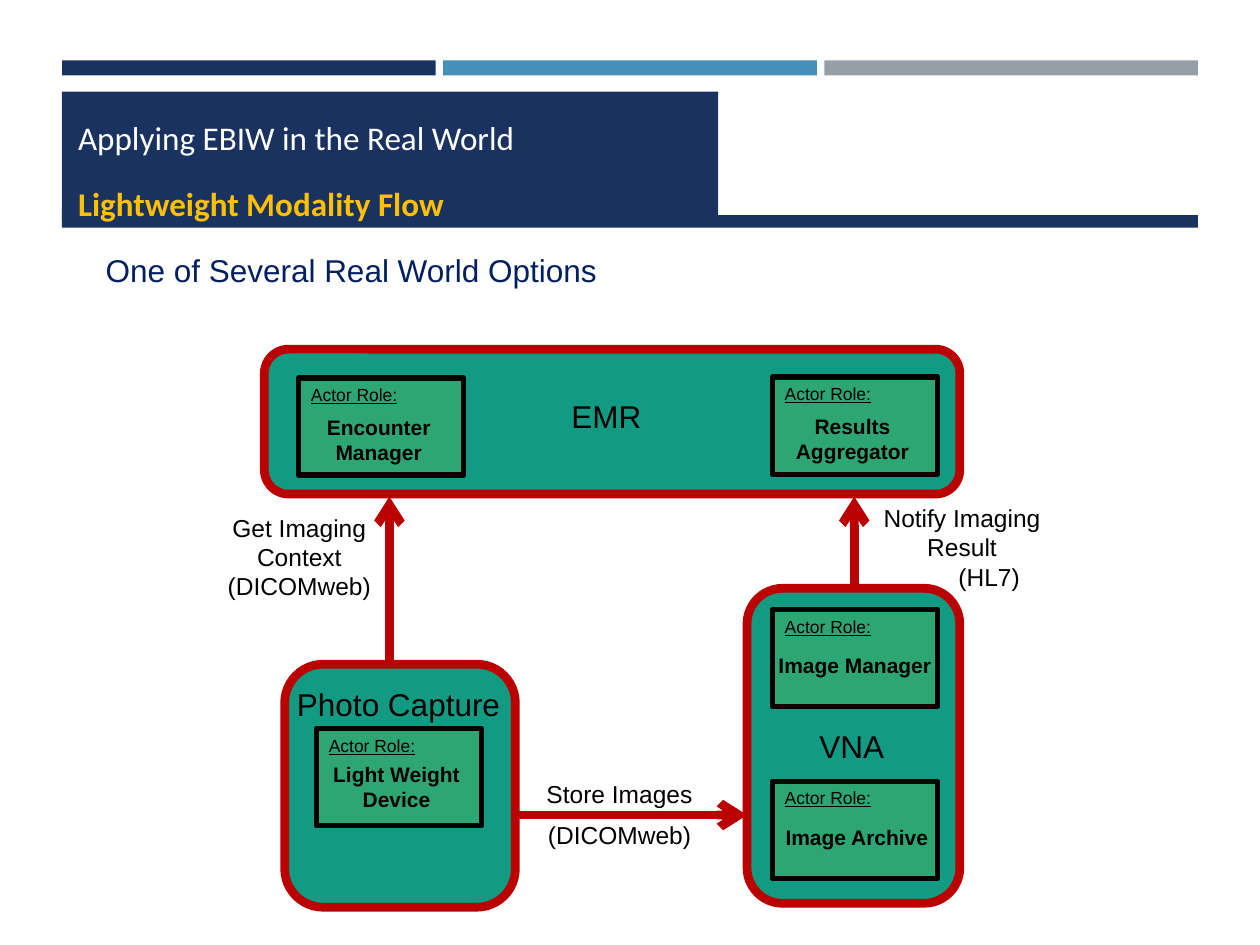
from lxml.etree import SubElement
from pptx import Presentation
from pptx.dml.color import RGBColor
from pptx.enum.shapes import MSO_CONNECTOR as CONN, MSO_SHAPE as SHAPE
from pptx.enum.text import MSO_ANCHOR as ANCHOR, MSO_AUTO_SIZE as AUTO, PP_ALIGN as AL
from pptx.oxml.ns import qn
from pptx.util import Cm, Pt

NAVY = RGBColor(0x1A, 0x32, 0x60)
BLUE = RGBColor(0x45, 0x90, 0xB8)
GREY = RGBColor(0x96, 0x9F, 0xA7)
INK = RGBColor(0x00, 0x20, 0x60)
GOLD = RGBColor(0xFF, 0xC0, 0x00)
YELLOW = RGBColor(0xFF, 0xFF, 0x00)
TEAL = RGBColor(0x12, 0x9A, 0x83)
RED = RGBColor(0xBA, 0x00, 0x00)
BLACK = RGBColor(0x00, 0x00, 0x00)
WHITE = RGBColor(0xFF, 0xFF, 0xFF)

SYSTEM_NAME = {"size": Pt(18)}
ACTOR_LABEL = {"size": Pt(10), "underline": True}
ACTOR_ROLE = {"size": Pt(12), "bold": True}
FLOW_LABEL = {"size": Pt(14)}
ACTOR_W, ACTOR_H = 3.33, 1.96


def set_font(font, fmt, color=BLACK):
    """Apply a dict of format values and a colour to a font."""
    for name, value in {"name": "Arial", **fmt}.items():
        setattr(font, name, value)
    font.color.rgb = color


def add_text(s, box, lines, fmt, color=BLACK, align=AL.CENTER):
    """Add a wrapping text box with one paragraph per line."""
    tf = s.shapes.add_textbox(*map(Cm, box)).text_frame
    tf.word_wrap = True
    tf.text = "\n".join(lines)
    for p in tf.paragraphs:
        p.alignment = align
        set_font(p.font, fmt, color)
    return tf


def add_box(s, kind, box, fill, line=None, width=0):
    """Add a flat filled shape with an optional outline."""
    sp = s.shapes.add_shape(kind, *map(Cm, box))
    sp.shadow.inherit = False
    sp.fill.solid()
    sp.fill.fore_color.rgb = fill
    if line is None:
        sp.line.fill.background()
    else:
        sp.line.color.rgb = line
        sp.line.width = Pt(width)
    return sp


def add_header(s, x, y, w):
    """Draw the colour bars, the title panel and its rule."""
    gap = 0.15
    bar_w = (w - 2 * gap) / 3
    for i, color in enumerate((NAVY, BLUE, GREY)):
        add_box(s, SHAPE.RECTANGLE, (x + i * (bar_w + gap), y, bar_w, 0.3), color)
    add_box(s, SHAPE.RECTANGLE, (x, y + 0.63, 13.23, 2.57), NAVY)
    add_box(s, SHAPE.RECTANGLE, (x, y + 3.12, w, 0.25), NAVY)

    title = s.shapes.title
    place = {"left": x + 0.07, "top": y + 1.02, "width": 17.86, "height": 2.08}
    for name, value in place.items():
        setattr(title, name, Cm(value))
    title.element.getparent().append(title.element)
    tf = title.text_frame
    for name, value in {"auto_size": AUTO.NONE, "word_wrap": True,
                        "vertical_anchor": ANCHOR.TOP}.items():
        setattr(tf, name, value)
    tf.text = "Applying EBIW in the Real World\nLightweight Modality Flow"
    for p, color, bold, gap in zip(tf.paragraphs, (WHITE, GOLD), (False, True), (0, 15)):
        p.alignment = AL.LEFT
        p.space_before = Pt(gap)
        set_font(p.font, {"name": "Calibri", "size": Pt(18.9), "bold": bold}, color)


def add_actor(s, x, y, role, dx, dy):
    """Draw an actor card with its role placed at an offset."""
    sp = add_box(s, SHAPE.RECTANGLE, (x, y, ACTOR_W, ACTOR_H), YELLOW, BLACK, 3)
    SubElement(sp.element.spPr.find(".//" + qn("a:srgbClr")), qn("a:alpha"), val="12000")
    add_text(s, (x, y, ACTOR_W, 0.69), ["Actor Role:"], ACTOR_LABEL, align=AL.LEFT)
    add_text(s, (x + dx - 0.21, y + dy, ACTOR_W + 0.42, 1.27), role, ACTOR_ROLE)


def add_system(s, box, name, name_box, actors):
    """Draw a system with its name and actors relative to its corner."""
    x, y = box[:2]
    dx, dy, w, h = name_box
    add_box(s, SHAPE.ROUNDED_RECTANGLE, box, TEAL, RED, 5)
    add_text(s, (x + dx, y + dy, w, h), [name], SYSTEM_NAME)
    for ax, ay, role, rx, ry in actors:
        add_actor(s, x + ax, y + ay, role, rx, ry)


def add_flow(s, start, end, label_box, lines):
    """Draw an arrow from start to end with its label."""
    cn = s.shapes.add_connector(CONN.STRAIGHT, *map(Cm, (*start, *end)))
    cn.line.color.rgb = RED
    cn.line.width = Pt(5)
    sp_pr = cn.element.spPr
    SubElement(sp_pr.find(qn("a:ln")), qn("a:tailEnd"), type="arrow")
    SubElement(sp_pr, qn("a:effectLst"))
    return add_text(s, label_box, lines, FLOW_LABEL)


def main():
    """Build the slide and save it."""
    prs = Presentation()
    prs.slide_width, prs.slide_height = Cm(25.4), Cm(19.05)
    s = prs.slides.add_slide(prs.slide_layouts[5])

    add_header(s, 1.25, 1.22, 22.9)
    add_text(s, (1.88, 4.93, 15, 1.02), ["One of Several Real World Options"],
             SYSTEM_NAME, INK, AL.LEFT)

    add_system(s, (5.74, 13.39, 4.65, 4.9), "Photo Capture", (-0.23, 0.3, 5.05, 1.02),
               [(0.64, 1.3, ["Light Weight", "Device"], -0.05, 0.53)])
    add_system(s, (15.06, 11.86, 4.29, 6.35), "VNA", (1.07, 2.67, 2.08, 1.02),
               [(0.51, 0.43, ["Image Manager"], 0, 0.74),
                (0.51, 3.89, ["Image Archive"], 0.04, 0.74)])
    add_system(s, (5.33, 7.04, 14.02, 2.92), "EMR", (5.64, 0.84, 2.51, 1.02),
               [(0.69, 0.58, ["Encounter", "Manager"], -0.05, 0.61),
                (10.24, 0.56, ["Results", "Aggregator"], -0.05, 0.61)])

    add_flow(s, (7.85, 13.39), (7.85, 10.01), (3.89, 10.21, 4.29, 2.06),
             ["Get Imaging", "Context", "(DICOMweb)"])
    store = add_flow(s, (10.39, 16.43), (15.06, 16.43), (10.19, 15.57, 4.6, 1.7),
                     ["Store Images", "(DICOMweb)"])
    store.paragraphs[1].space_before = Pt(7)
    notify = add_flow(s, (17.22, 11.86), (17.22, 10.01), (17.25, 10.01, 4.29, 2.06),
                      ["Notify Imaging Result", "(HL7)"])
    notify.paragraphs[1].element.get_or_add_pPr().set("marL", str(Cm(1.09))) \
        if hasattr(notify.paragraphs[1], "element") else \
        notify.paragraphs[1]._p.get_or_add_pPr().set("marL", str(Cm(1.09)))

    prs.save("out.pptx")


if __name__ == "__main__":
    main()
